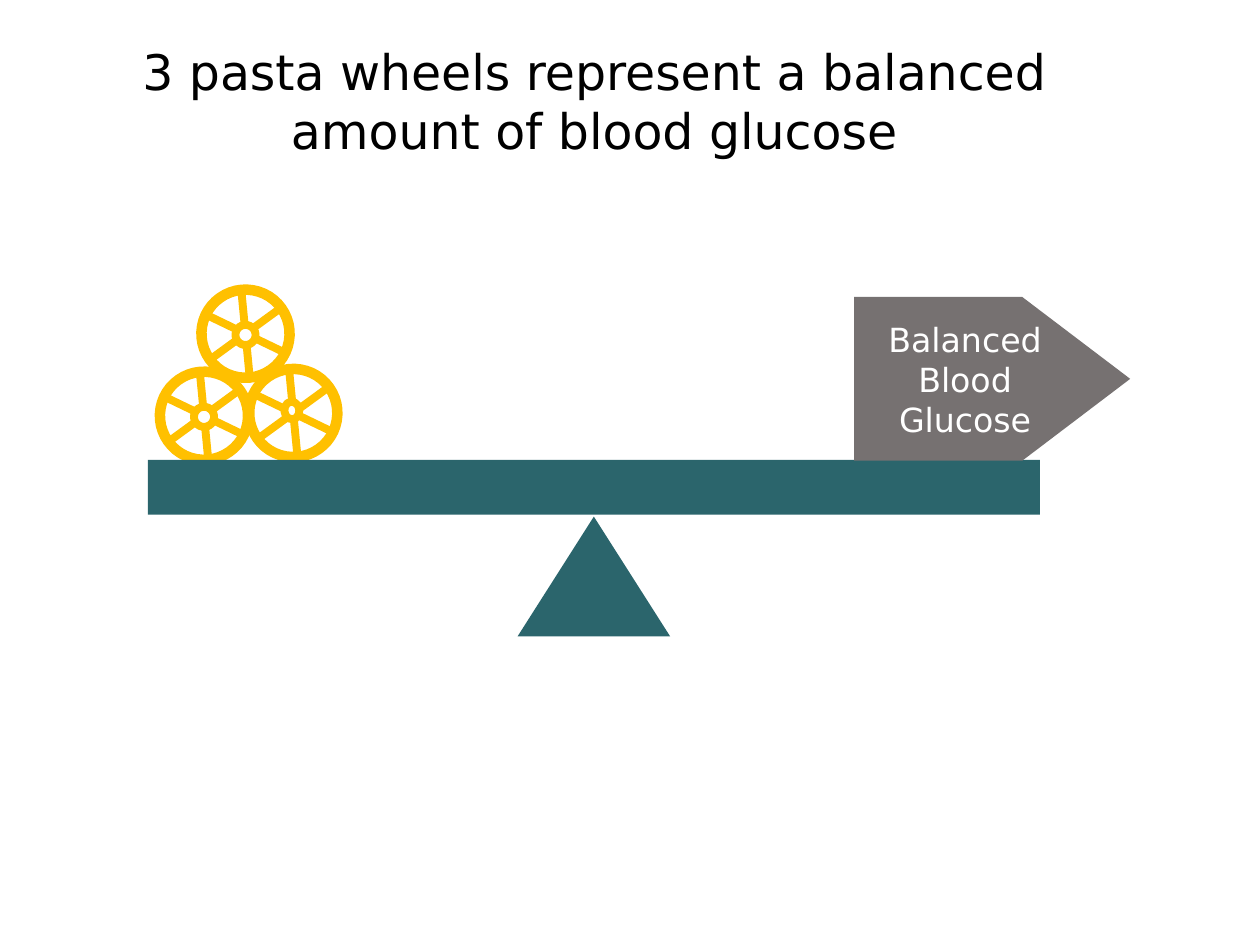
from dataclasses import dataclass

from lxml.etree import SubElement
from pptx import Presentation
from pptx.dml.color import RGBColor
from pptx.enum.shapes import MSO_CONNECTOR, MSO_SHAPE
from pptx.enum.text import MSO_ANCHOR, PP_ALIGN
from pptx.oxml.ns import qn
from pptx.util import Pt


@dataclass(frozen=True)
class Theme:
    """Colours, font, type sizes and line widths of the slide."""
    pasta: RGBColor = RGBColor(0xFF, 0xC0, 0x00)
    seesaw: RGBColor = RGBColor(0x2B, 0x65, 0x6C)
    sign: RGBColor = RGBColor(0x76, 0x71, 0x71)
    white: RGBColor = RGBColor(0xFF, 0xFF, 0xFF)
    black: RGBColor = RGBColor(0x00, 0x00, 0x00)
    font: str = "DejaVu Sans"
    title_size: float = 28
    label_size: float = 19
    rim_width: float = 6
    spoke_width: float = 4.5


THEME = Theme()
RIM_RADIUS = 25.2
WHEEL_ROTATION = 354.8
SPOKE_ENDS = [(20.3, -14.8), (-2.4, -25), (-22.4, -10.8)]


def write_text(shape, text, size, color):
    """Put centred, wrapped text into a shape."""
    frame = shape.text_frame
    frame.word_wrap = True
    frame.text = text
    paragraph = frame.paragraphs[0]
    paragraph.alignment = PP_ALIGN.CENTER
    font = paragraph.runs[0].font
    font.name = THEME.font
    font.size = Pt(size)
    font.color.rgb = color


def add_block(shapes, kind, left, top, width, height, fill):
    """Add a filled shape without an outline."""
    shape = shapes.add_shape(kind, Pt(left), Pt(top), Pt(width), Pt(height))
    shape.shadow.inherit = False
    shape.fill.solid()
    shape.fill.fore_color.rgb = fill
    shape.line.fill.background()
    return shape


def add_ring(shapes, center, width, height, line_width, fill=None):
    """Add a tilted pasta-coloured ellipse around a centre."""
    x, y = center
    ring = add_block(shapes, MSO_SHAPE.OVAL, x - width / 2, y - height / 2,
                     width, height, fill or THEME.white)
    if fill is None:
        ring.fill.background()
    ring.rotation = WHEEL_ROTATION
    ring.line.color.rgb = THEME.pasta
    ring.line.width = Pt(line_width)


def add_spoke(shapes, center, end):
    """Add a straight spoke through the centre of a wheel."""
    (x, y), (dx, dy) = center, end
    spoke = shapes.add_connector(MSO_CONNECTOR.STRAIGHT, Pt(x + dx), Pt(y + dy),
                                 Pt(x - dx), Pt(y - dy))
    spoke.line.color.rgb = THEME.pasta
    spoke.line.width = Pt(THEME.spoke_width)
    SubElement(spoke._element.spPr, qn("a:effectLst"))


def add_wheel(slide, center, hub_center, hub_width, hub_height):
    """Add a pasta wheel as one group of spokes, rim and hub."""
    shapes = slide.shapes.add_group_shape().shapes
    for end in SPOKE_ENDS:
        add_spoke(shapes, center, end)
    add_ring(shapes, center, 2 * RIM_RADIUS, 2 * RIM_RADIUS, THEME.rim_width)
    add_ring(shapes, hub_center, hub_width, hub_height, THEME.spoke_width, THEME.white)


def add_title(slide, text):
    """Add the slide title."""
    title = slide.shapes.add_textbox(Pt(42.5), Pt(20.2), Pt(594), Pt(75.6))
    frame = title.text_frame
    frame.margin_left = frame.margin_right = Pt(7.9)
    frame.margin_top = frame.margin_bottom = Pt(3.6)
    write_text(title, text, THEME.title_size, THEME.black)


def add_sign(slide, text):
    """Add the pointed sign standing on the beam."""
    sign = add_block(slide.shapes, MSO_SHAPE.PENTAGON, 488, 169.7, 157.8, 93.6, THEME.sign)
    sign.adjustments[0] = 0.659
    sign.text_frame.vertical_anchor = MSO_ANCHOR.MIDDLE
    write_text(sign, text, THEME.label_size, THEME.white)


def main():
    """Build and save the slide."""
    presentation = Presentation()
    presentation.slide_width, presentation.slide_height = Pt(720), Pt(540)
    slide = presentation.slides.add_slide(presentation.slide_layouts[6])
    add_wheel(slide, (116.6, 237.6), (116.6, 238.2), 11.5, 11.5)
    add_wheel(slide, (167.6, 236), (166.8, 234.6), 8.6, 10.1)
    add_wheel(slide, (140.3, 190.7), (140.3, 191.4), 11.5, 11.5)
    add_block(slide.shapes, MSO_SHAPE.RECTANGLE, 84.5, 262.8, 509.8, 31.3, THEME.seesaw)
    add_block(slide.shapes, MSO_SHAPE.ISOSCELES_TRIANGLE, 295.8, 295.2, 87.1, 68.4, THEME.seesaw)
    add_sign(slide, "Balanced Blood Glucose")
    add_title(slide, "3 pasta wheels represent a balanced amount of blood glucose")
    presentation.save("out.pptx")


if __name__ == "__main__":
    main()
